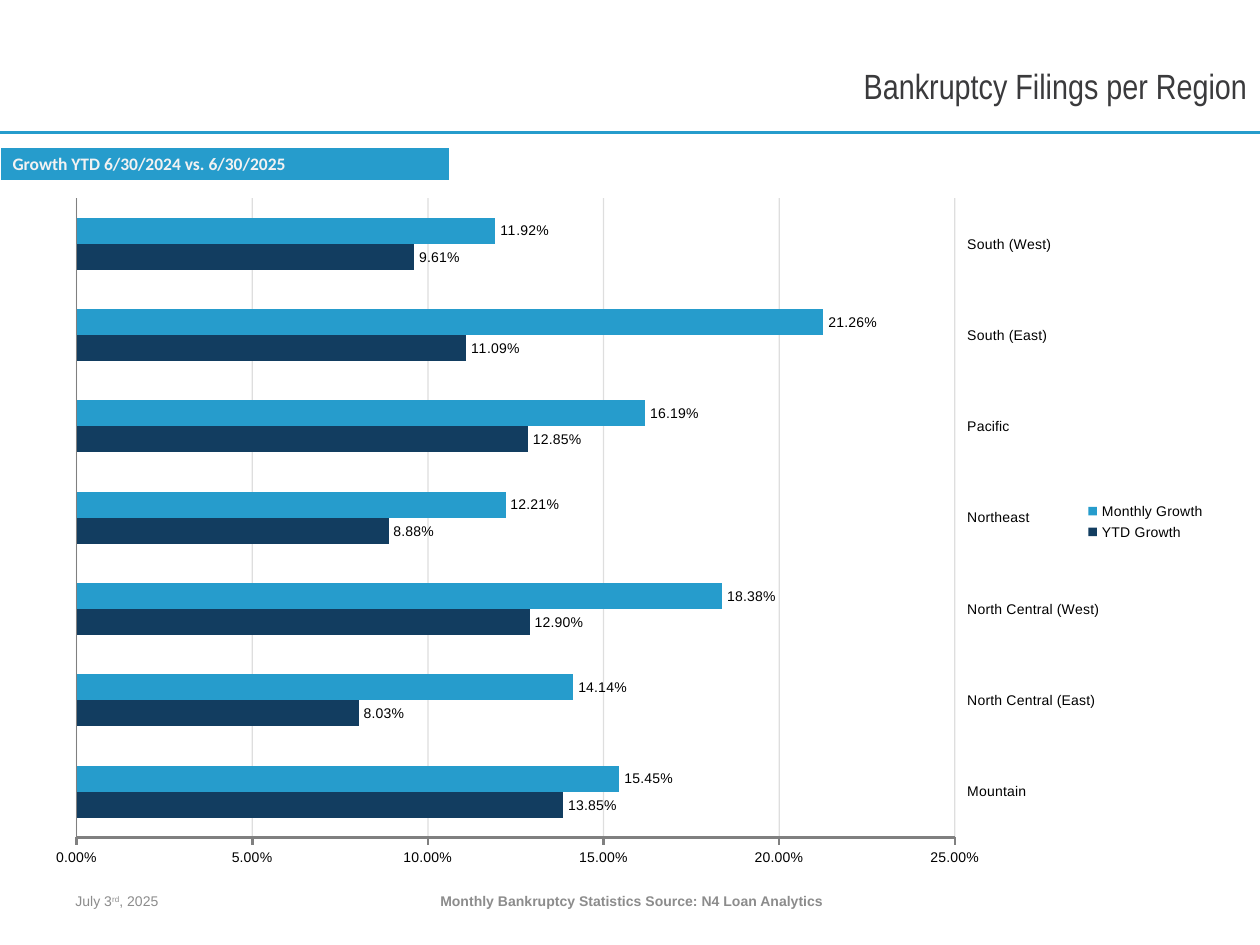
from dataclasses import dataclass

from lxml import etree
from pptx import Presentation
from pptx.chart.data import CategoryChartData
from pptx.dml.color import RGBColor
from pptx.enum.chart import (XL_CHART_TYPE, XL_LABEL_POSITION, XL_LEGEND_POSITION,
                             XL_TICK_LABEL_POSITION, XL_TICK_MARK)
from pptx.enum.shapes import MSO_CONNECTOR
from pptx.enum.text import MSO_ANCHOR, PP_ALIGN
from pptx.oxml import parse_xml
from pptx.oxml.ns import nsdecls, qn
from pptx.util import Inches, Pt

BAR = XL_CHART_TYPE.BAR_CLUSTERED
LABEL_END = XL_LABEL_POSITION.OUTSIDE_END
LEGEND_RIGHT = XL_LEGEND_POSITION.RIGHT
LABELS_HIGH = XL_TICK_LABEL_POSITION.HIGH
TICK_NONE, TICK_OUT = XL_TICK_MARK.NONE, XL_TICK_MARK.OUTSIDE
STRAIGHT = MSO_CONNECTOR.STRAIGHT
MIDDLE = MSO_ANCHOR.MIDDLE
LEFT, CENTER, RIGHT = PP_ALIGN.LEFT, PP_ALIGN.CENTER, PP_ALIGN.RIGHT


@dataclass(frozen=True)
class Theme:
    """Colours, fonts and type sizes of the slide."""
    accent: str = "269CCC"
    navy: str = "123D60"
    title: str = "3A3A3C"
    muted: str = "8C8C8C"
    axis: str = "808080"
    pale: str = "F2F2F2"
    white: str = "FFFFFF"
    black: str = "000000"
    body_font: str = "Arial"
    title_font: str = "Arial Narrow"
    banner_font: str = "Calibri"
    title_size: int = 20
    banner_size: int = 10
    small_size: int = 8


THEME = Theme()
PERCENT = "0.00%"
REGIONS = ["Mountain", "North Central (East)", "North Central (West)", "Northeast",
           "Pacific", "South (East)", "South (West)"]
GROWTH = {
    "YTD Growth": (THEME.navy, [0.1385, 0.0803, 0.129, 0.0888, 0.1285, 0.1109, 0.0961]),
    "Monthly Growth": (THEME.accent, [0.1545, 0.1414, 0.1838, 0.1221, 0.1619, 0.2126, 0.1192]),
}


def rgb(value):
    """Turn a hex string into a colour."""
    return RGBColor.from_string(value)


def inches(box):
    """Turn a box in inches into lengths."""
    return [Inches(side) for side in box]


def style_font(font, size=THEME.small_size, color=THEME.black, name=THEME.body_font, bold=False):
    """Format a font."""
    font.size, font.name, font.bold = Pt(size), name, bold
    font.color.rgb = rgb(color)


def write_text(frame, *parts, align=LEFT, raised=(), **style):
    """Write one paragraph of spans, raising those whose text is listed."""
    frame.word_wrap = True
    frame.vertical_anchor = MIDDLE
    para = frame.paragraphs[0]
    para.alignment = align
    for part in parts:
        span = para.add_run()
        span.text = part
        style_font(span.font, **style)
        if part in raised:
            span.font._element.set("baseline", "30000")


def style_line(line, color, width):
    """Format a line."""
    line.color.rgb = rgb(color)
    line.width = Pt(width)


def white_fill(opacity):
    """Return chart shape properties with a translucent white fill and no line."""
    return parse_xml(
        f'<c:spPr {nsdecls("c", "a")}><a:solidFill><a:srgbClr val="{THEME.white}">'
        f'<a:alpha val="{opacity * 1000}"/></a:srgbClr></a:solidFill>'
        '<a:ln><a:noFill/></a:ln></c:spPr>')


def add_header(page, box):
    """Place the title and the rule along the bottom of its box."""
    left, top, width, height = inches(box)
    title = page.shapes.title
    title.left, title.top, title.width, title.height = left, top, width, height
    write_text(title.text_frame, "Bankruptcy Filings per Region", align=RIGHT,
               size=THEME.title_size, color=THEME.title, name=THEME.title_font)
    bottom = top + height
    rule = page.shapes.add_connector(STRAIGHT, left, bottom, left + width, bottom)
    style_line(rule.line, THEME.accent, 1.5)
    etree.SubElement(rule._element.spPr, qn("a:effectLst"))


def add_banner(page, box):
    """Place the one-cell table that names the period."""
    table = page.shapes.add_table(1, 1, *inches(box)).table
    table.first_row = table.horz_banding = False
    cell = table.cell(0, 0)
    write_text(cell.text_frame, "Growth YTD 6/30/2024 vs. 6/30/2025",
               size=THEME.banner_size, color=THEME.pale, name=THEME.banner_font, bold=True)
    cell.vertical_anchor = MIDDLE
    cell.fill.solid()
    cell.fill.fore_color.rgb = rgb(THEME.accent)
    border = parse_xml(f'<a:lnB {nsdecls("a")} w="{Pt(2)}"><a:solidFill>'
                       f'<a:srgbClr val="{THEME.white}"/></a:solidFill></a:lnB>')
    cell._tc.get_or_add_tcPr().insert(0, border)


def place_plot(chart, left, top, width, height):
    """Fix the inner plot area, in shares of the chart, and fill the backgrounds."""
    plot_area = chart._chartSpace.chart.plotArea
    for layout in plot_area.findall(qn("c:layout")):
        plot_area.remove(layout)
    sides = "".join(f'<c:{tag} val="{value}"/>' for tag, value in
                    zip("xywh", (left, top, width, height)))
    plot_area.insert(0, parse_xml(
        f'<c:layout {nsdecls("c")}><c:manualLayout><c:layoutTarget val="inner"/>'
        f'<c:xMode val="edge"/><c:yMode val="edge"/>{sides}</c:manualLayout></c:layout>'))
    plot_area.append(white_fill(50))
    chart._chartSpace.chart.addnext(white_fill(90))


def style_axes(chart):
    """Format both axes and the gridlines."""
    regions, growth = chart.category_axis, chart.value_axis
    regions.major_tick_mark = TICK_NONE
    regions.tick_label_position = LABELS_HIGH
    style_line(regions.format.line, THEME.axis, 0.75)
    growth.minimum_scale, growth.maximum_scale, growth.major_unit = 0, 0.25, 0.05
    growth.major_tick_mark = TICK_OUT
    growth.tick_labels.number_format = PERCENT
    growth.tick_labels.number_format_is_linked = False
    style_line(growth.format.line, THEME.axis, 1.5)
    grid = growth.major_gridlines.format.line
    style_line(grid, THEME.axis, 0.75)
    shade = growth.major_gridlines._xAx.find(qn("c:majorGridlines")).find(".//" + qn("a:srgbClr"))
    etree.SubElement(shade, qn("a:alpha"), val="25000")


def add_growth_chart(page, box):
    """Place the bar chart of growth by region."""
    data = CategoryChartData(number_format=PERCENT)
    data.categories = REGIONS
    for name, (_, values) in GROWTH.items():
        data.add_series(name, values)
    chart = page.shapes.add_chart(BAR, *inches(box), data).chart
    chart.has_title = False
    place_plot(chart, 0.038, 0.028, 0.74, 0.933)
    style_font(chart.font)
    style_axes(chart)
    chart.has_legend = True
    chart.legend.position = LEGEND_RIGHT
    chart.legend.include_in_layout = False
    plot = chart.plots[0]
    plot.gap_width, plot.overlap, plot.vary_by_categories = 150, 0, False
    for series in plot.series:
        series.format.fill.solid()
        series.format.fill.fore_color.rgb = rgb(GROWTH[series.name][0])
        labels = series.data_labels
        labels.show_value = True
        labels.number_format, labels.number_format_is_linked = PERCENT, False
        labels.position = LABEL_END
        style_font(labels.font)


def add_footer_text(page, box, *parts, **style):
    """Place one muted footer text."""
    frame = page.shapes.add_textbox(*inches(box)).text_frame
    write_text(frame, *parts, color=THEME.muted, **style)


def main():
    """Build the deck."""
    deck = Presentation()
    deck.slide_width, deck.slide_height = Inches(10), Inches(7.5)
    page = deck.slides.add_slide(deck.slide_layouts[5])
    add_header(page, (0, 0.3, 10, 0.75))
    add_growth_chart(page, (0.25, 1.42, 9.42, 5.45))
    add_banner(page, (0, 1.17, 3.57, 0.25))
    add_footer_text(page, (3.14, 6.95, 3.75, 0.4),
                    "Monthly Bankruptcy Statistics Source: N4 Loan Analytics",
                    align=CENTER, bold=True)
    add_footer_text(page, (0.5, 6.95, 2.33, 0.4), "July 3", "rd", ", 2025", raised=("rd",))
    deck.save("out.pptx")


if __name__ == "__main__":
    main()
